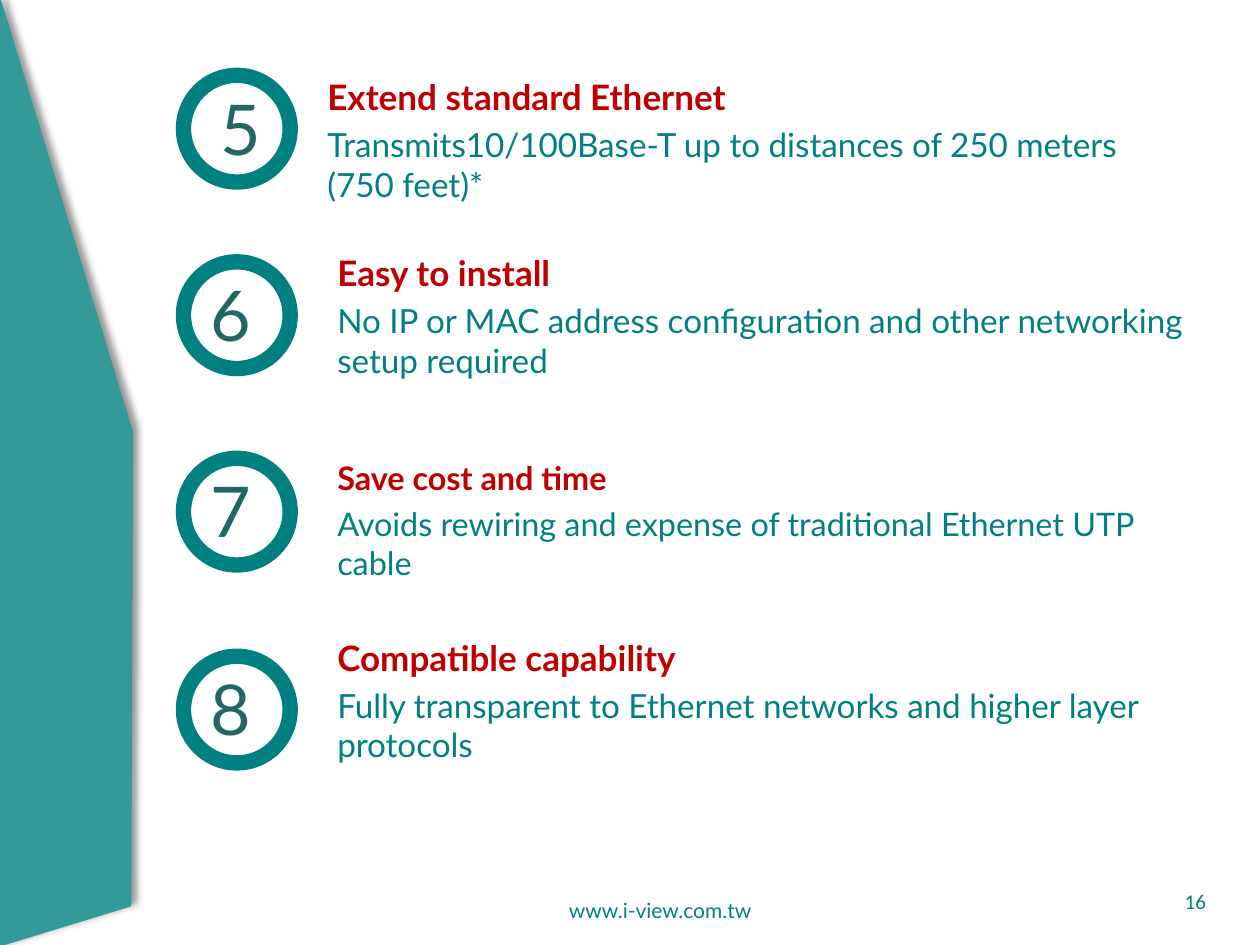
from dataclasses import dataclass

from lxml import etree
from pptx import Presentation
from pptx import util as u
from pptx.dml.color import RGBColor
from pptx.enum import shapes, text
from pptx.oxml.ns import qn

TEAL = RGBColor(0x00, 0x80, 0x80)
DARK_TEAL = RGBColor(0x23, 0x67, 0x65)
STRIPE_TEAL = RGBColor(0x34, 0x9A, 0x98)
RED = RGBColor(0xC0, 0x00, 0x00)
FONT = "Lato"

BADGE_LEFT, BADGE_SIZE = 3.58, 2.39
HANGING_INDENT = u.Cm(0.97)


@dataclass
class Benefit:
    number: str
    heading: str
    detail: str
    badge_top: float
    text_top: float
    text_left: float = 6.55
    text_width: float = 17.75
    number_left: float = 3.76
    heading_size: float = 20
    detail_size: float = 19


BENEFITS = [
    Benefit("5", "Extend standard Ethernet",
            "Transmits10/100Base-T up to distances of 250 meters (750 feet)*",
            1.4, 1.4, text_left=6.35, number_left=3.96),
    Benefit("6", "Easy to install",
            "No IP or MAC address configuration and other networking setup required",
            5.16, 4.95),
    Benefit("7", "Save cost and time",
            "Avoids rewiring and expense of traditional Ethernet UTP cable",
            9.12, 9.12, text_width=17.07, heading_size=18.5, detail_size=18.5),
    Benefit("8", "Compatible capability",
            "Fully transparent to Ethernet networks and higher layer protocols",
            13.11, 12.7),
]


def add_box(parent, left: float, top: float, width: float, height: float,
            anchor=text.MSO_ANCHOR.TOP):
    box = parent.add_textbox(u.Cm(left), u.Cm(top), u.Cm(width), u.Cm(height))
    frame = box.text_frame
    frame.word_wrap = True
    frame.vertical_anchor = anchor
    return frame


def add_run(paragraph, words: str, size: float, color: RGBColor,
            bold: bool = False, font: str = FONT) -> None:
    run = paragraph.add_run()
    run.text = words
    run.font.name = font
    run.font.size = u.Pt(size)
    run.font.bold = bold
    run.font.color.rgb = color


def add_filled_shape(parent, kind, left: float, top: float, width: float,
                     height: float, color: RGBColor, adjustment: float):
    shape = parent.add_shape(kind, u.Cm(left), u.Cm(top), u.Cm(width), u.Cm(height))
    shape.adjustments[0] = adjustment
    shape.fill.solid()
    shape.fill.fore_color.rgb = color
    shape.line.color.rgb = color
    shape.line.width = u.Pt(2)
    shape.shadow.inherit = False
    return shape


def add_side_stripe(slide) -> None:
    stripe = add_filled_shape(slide.shapes, shapes.MSO_SHAPE.DIAGONAL_STRIPE,
                              -2.87, 0.43, 5.64, 18.21, STRIPE_TEAL, 0.5)
    stripe.rotation = 163
    # Soft shadow towards the upper right
    effects = stripe.element.spPr.find(qn("a:effectLst"))
    shadow = etree.SubElement(effects, qn("a:outerShdw"), blurRad=str(u.Pt(4)),
                              dist=str(u.Pt(3)), dir=str(315 * 60000),
                              algn="bl", rotWithShape="0")
    color = etree.SubElement(shadow, qn("a:srgbClr"), val="000000")
    etree.SubElement(color, qn("a:alpha"), val="40000")


def add_benefit(slide, benefit: Benefit) -> None:
    # Numbered ring
    badge = slide.shapes.add_group_shape().shapes
    add_filled_shape(badge, shapes.MSO_SHAPE.DONUT, BADGE_LEFT, benefit.badge_top,
                     BADGE_SIZE, BADGE_SIZE, TEAL, 0.1)
    number = add_box(badge, benefit.number_left, benefit.badge_top + 0.19,
                     1.78, 1.96).paragraphs[0]
    number.alignment = text.PP_ALIGN.CENTER
    add_run(number, benefit.number, 40, DARK_TEAL)

    # Heading and detail
    frame = add_box(slide.shapes, benefit.text_left, benefit.text_top,
                    benefit.text_width, 2.97)
    heading = frame.paragraphs[0]
    properties = heading._p.get_or_add_pPr()
    properties.set("marL", str(HANGING_INDENT))
    properties.set("indent", str(-HANGING_INDENT))
    add_run(heading, benefit.heading, benefit.heading_size, RED, bold=True)
    detail = frame.add_paragraph()
    detail.space_before = u.Pt(3.8)
    add_run(detail, benefit.detail, benefit.detail_size, TEAL)


def main() -> None:
    deck = Presentation()
    deck.slide_width, deck.slide_height = u.Cm(25.4), u.Cm(19.05)
    slide = deck.slides.add_slide(deck.slide_layouts[6])

    # Footer and page number
    address = add_box(slide.shapes, 8.94, 17.65, 8.74, 1.4,
                      text.MSO_ANCHOR.MIDDLE).paragraphs[0]
    address.alignment = text.PP_ALIGN.CENTER
    add_run(address, "www.i-view.com.tw", 12, TEAL)
    page = add_box(slide.shapes, 18.64, 17.65, 5.92, 1.02,
                   text.MSO_ANCHOR.MIDDLE).paragraphs[0]
    page.alignment = text.PP_ALIGN.RIGHT
    add_run(page, "16", 12, TEAL, font="Calibri")

    for benefit in BENEFITS:
        add_benefit(slide, benefit)
    add_side_stripe(slide)

    deck.save("out.pptx")


if __name__ == "__main__":
    main()
